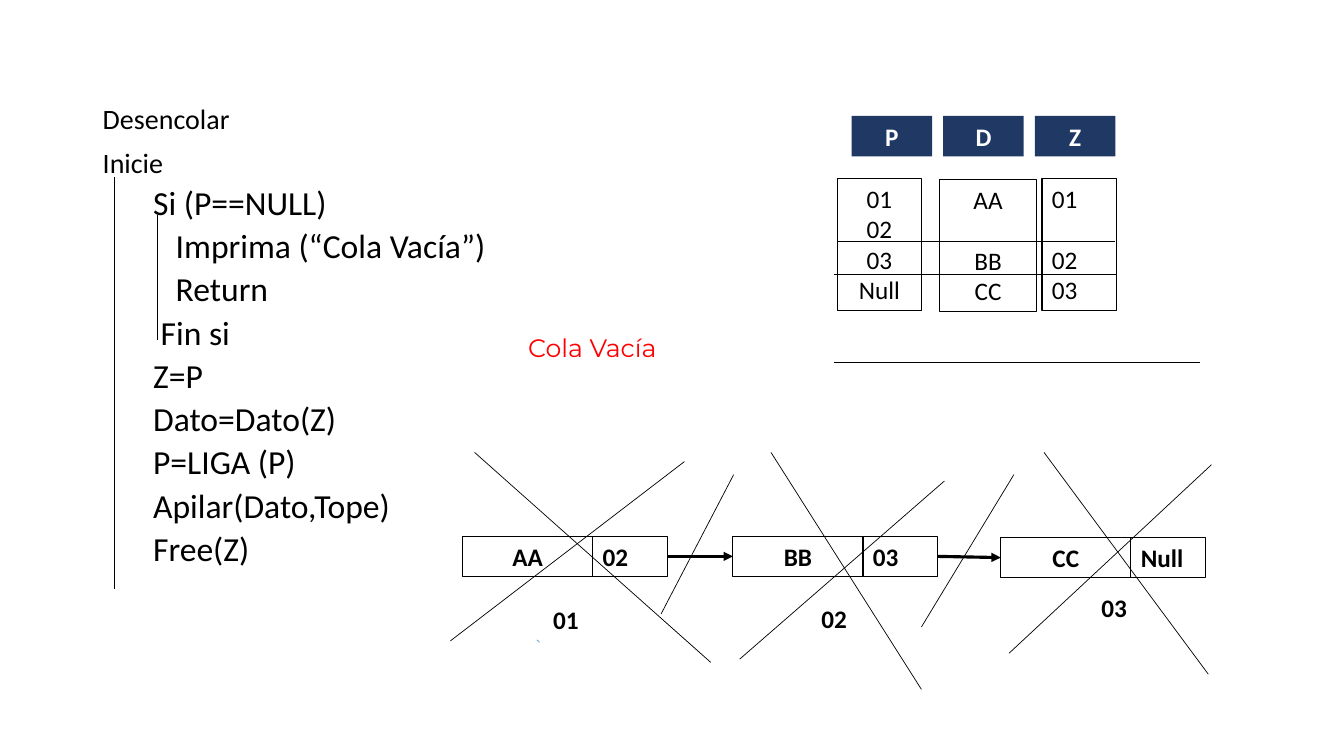
from dataclasses import dataclass

from lxml.etree import SubElement
from pptx import Presentation
from pptx.dml.color import RGBColor
from pptx.enum.shapes import MSO_CONNECTOR, MSO_SHAPE
from pptx.enum.text import MSO_ANCHOR, PP_ALIGN
from pptx.oxml.ns import qn
from pptx.util import Cm, Pt

COLORS = {"ink": "000000", "navy": "203864", "white": "FFFFFF",
          "red": "FF0000", "blue": "5B9BD5"}
ROW_HEIGHT = 1.02
DATA_WIDTH, LINK_WIDTH = 3.28, 1.88
HEADER_LEFT, HEADER_STEP = 21.46, 2.31
SKIPPED_ROW = 22  # points


@dataclass
class Line:
    text: str
    size: float = 18
    indent: float = 0
    before: float = 0


@dataclass
class Box:
    left: float
    top: float
    width: float
    height: float = ROW_HEIGHT


@dataclass
class Node:
    data: str
    link: str
    address: str
    left: float
    top: float
    address_left: float
    address_top: float


@dataclass
class Column:
    header: str
    box: Box
    lines: list
    align: PP_ALIGN = PP_ALIGN.CENTER


@dataclass
class Stroke:
    x1: float
    y1: float
    x2: float
    y2: float


PSEUDOCODE = [
    Line("Desencolar", 20),
    Line("Inicie", 20, before=10),
    *(Line(text, 24, indent, 5) for text, indent in [
        ("Si (P==NULL)", 1.27),
        ("Imprima (“Cola Vacía”)", 1.84),
        ("Return", 1.84),
        ("Fin si", 1.46),
        ("Z=P", 1.27),
        ("Dato=Dato(Z)", 1.27),
        ("P=LIGA (P)", 1.27),
        ("Apilar(Dato,Tope)", 1.27),
        ("Free(Z)", 1.27),
    ]),
]
NODES = [
    Node("AA", "02", "01", 11.66, 13.51, 13.51, 15.11),
    Node("BB", "03", "02", 18.47, 13.51, 20.27, 15.09),
    Node("CC", "Null", "03", 25.22, 13.54, 27.33, 14.81),
]
COLUMNS = [
    Column("P", Box(21.11, 4.5, 2.11, 3.33),
           [Line("01"), Line("02"), Line("03"), Line("Null")]),
    Column("D", Box(23.67, 4.52, 2.46, 3.33),
           [Line("AA"), Line("BB", before=SKIPPED_ROW), Line("CC")]),
    Column("Z", Box(26.26, 4.5, 1.88, 3.33),
           [Line("01"), Line("02", before=SKIPPED_ROW), Line("03")], PP_ALIGN.LEFT),
]
BLOCK_GUIDES = [Stroke(2.87, 4.47, 2.87, 14.83), Stroke(3.96, 5.41, 3.96, 8.56)]
TRACE_RULES = [
    Stroke(21.11, 6.07, 28.09, 6.07),
    Stroke(21.01, 6.91, 28.14, 6.91),
    Stroke(21.01, 9.14, 30.23, 9.14),
]
NODE_CROSSES = [
    Stroke(11.35, 16.15, 17.25, 11.63), Stroke(11.96, 11.4, 17.91, 16.69),
    Stroke(18.64, 16.61, 23.8, 12.12), Stroke(19.43, 11.4, 23.22, 17.37),
    Stroke(25.43, 16.46, 30.53, 11.71), Stroke(26.31, 11.4, 30.45, 16.99),
]
ARROW_SLASHES = [
    Stroke(18.49, 11.96, 16.66, 15.47),
    Stroke(23.22, 15.8, 25.55, 11.96),
]


def rgb(name: str) -> RGBColor:
    return RGBColor.from_string(COLORS[name])


def write(shape, lines: list, *, color: str = "ink", bold: bool = False,
          font: str = "Calibri", align=PP_ALIGN.LEFT, spacing: float = 1.0,
          anchor=MSO_ANCHOR.TOP) -> None:
    frame = shape.text_frame
    frame.word_wrap = True
    frame.vertical_anchor = anchor
    for number, line in enumerate(lines):
        paragraph = frame.add_paragraph() if number else frame.paragraphs[0]
        paragraph.alignment = align
        paragraph.line_spacing = spacing
        paragraph.space_before = Pt(line.before)
        paragraph._p.get_or_add_pPr().set("marL", str(int(Cm(line.indent))))
        run = paragraph.add_run()
        run.text = line.text
        run.font.name = font
        run.font.size = Pt(line.size)
        run.font.bold = bold
        run.font.color.rgb = rgb(color)


def place(box: Box) -> tuple:
    return Cm(box.left), Cm(box.top), Cm(box.width), Cm(box.height)


def add_label(slide, box: Box, lines: list, **text_format) -> None:
    write(slide.shapes.add_textbox(*place(box)), lines, **text_format)


def add_outline(slide, box: Box, preset=MSO_SHAPE.RECTANGLE, *,
                fill: str = "", line: str = "ink", weight: float = 0.75):
    """Draw a preset shape; an empty colour name means none."""
    shape = slide.shapes.add_shape(preset, *place(box))
    shape.shadow.inherit = False
    if fill:
        shape.fill.solid()
        shape.fill.fore_color.rgb = rgb(fill)
    else:
        shape.fill.background()
    if line:
        shape.line.color.rgb = rgb(line)
        shape.line.width = Pt(weight)
    else:
        shape.line.fill.background()
    return shape


def add_stroke(slide, stroke: Stroke, weight: float = 0.5):
    connector = slide.shapes.add_connector(
        MSO_CONNECTOR.STRAIGHT, Cm(stroke.x1), Cm(stroke.y1), Cm(stroke.x2), Cm(stroke.y2))
    connector.line.color.rgb = rgb("ink")
    connector.line.width = Pt(weight)
    SubElement(connector._element.spPr, qn("a:effectLst"))
    return connector


def add_arrow(slide, source, target) -> None:
    arrow = add_stroke(slide, Stroke(0, 0, 1, 1), 2.25)
    arrow.begin_connect(source, 3)
    arrow.end_connect(target, 1)
    SubElement(arrow.line._get_or_add_ln(), qn("a:tailEnd"), type="triangle")


def add_node(slide, node: Node) -> tuple:
    """Draw a list node and return its data and link cells."""
    data = add_outline(slide, Box(node.left, node.top, DATA_WIDTH))
    write(data, [Line(node.data)], bold=True, align=PP_ALIGN.CENTER)
    link = add_outline(slide, Box(node.left + DATA_WIDTH, node.top, LINK_WIDTH))
    write(link, [Line(node.link)], bold=True)
    add_label(slide, Box(node.address_left, node.address_top, 1.5),
              [Line(node.address)], bold=True, align=PP_ALIGN.CENTER)
    return data, link


def add_column(slide, column: Column, position: int) -> None:
    header = add_outline(
        slide, Box(HEADER_LEFT + position * HEADER_STEP, 2.92, 2.03), fill="navy", line="")
    write(header, [Line(column.header)], color="white", bold=True,
          align=PP_ALIGN.CENTER, anchor=MSO_ANCHOR.MIDDLE)
    write(add_outline(slide, column.box), column.lines, align=column.align)


def main() -> None:
    deck = Presentation()
    deck.slide_width, deck.slide_height = Cm(33.87), Cm(19.05)
    slide = deck.slides.add_slide(deck.slide_layouts[6])

    add_label(slide, Box(2.34, 2.52, 29.21, 14.63), PSEUDOCODE, spacing=0.9)
    add_outline(slide, Box(13.46, 16.13, 0.13, 0.13), MSO_SHAPE.ARC, line="blue", weight=0.5)

    cells = [add_node(slide, node) for node in NODES]
    for (_, link), (next_data, _) in zip(cells, cells[1:]):
        add_arrow(slide, link, next_data)
    for position, column in enumerate(COLUMNS):
        add_column(slide, column, position)
    for stroke in BLOCK_GUIDES + TRACE_RULES + NODE_CROSSES + ARROW_SLASHES:
        add_stroke(slide, stroke)
    add_label(slide, Box(13.06, 8.26, 5.13), [Line("Cola Vacía")],
              color="red", font="Montserrat")

    deck.save("out.pptx")


if __name__ == "__main__":
    main()
